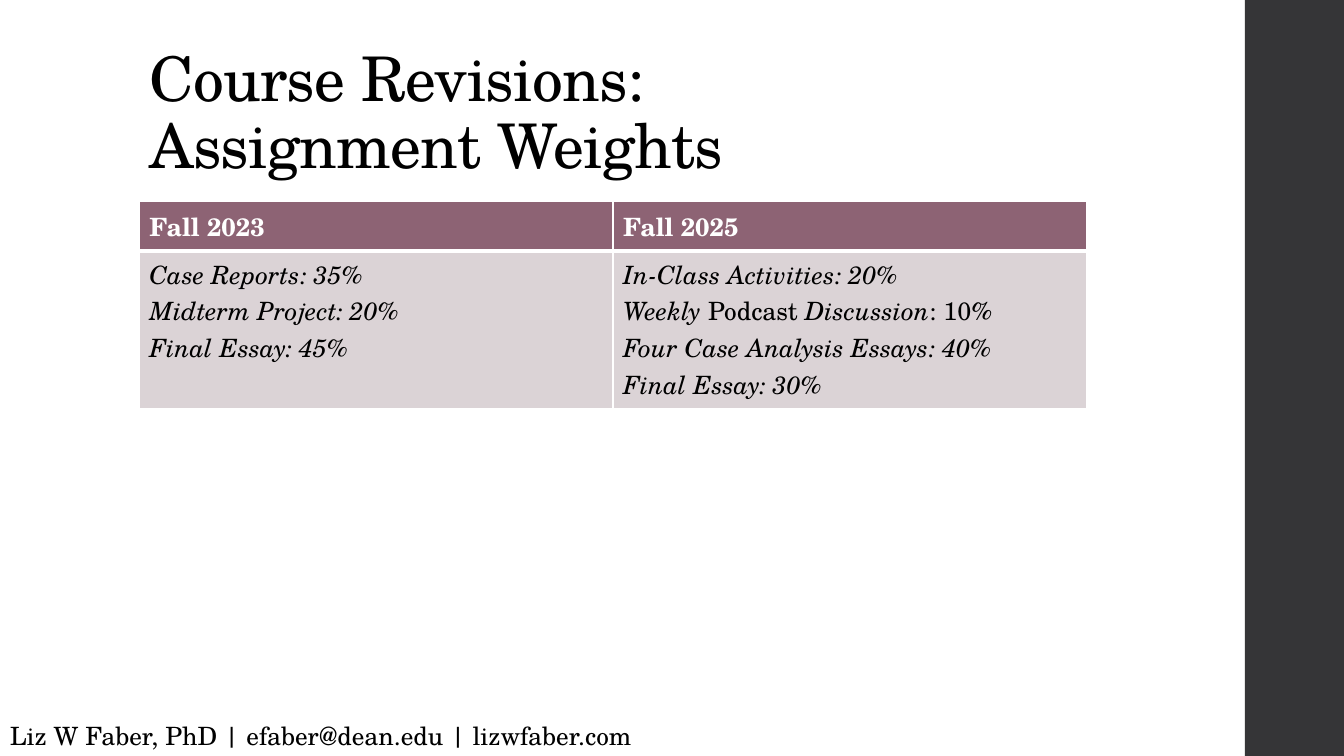
from lxml.etree import SubElement
from pptx import Presentation
from pptx.dml.color import RGBColor
from pptx.enum.shapes import MSO_SHAPE
from pptx.enum.text import MSO_ANCHOR, MSO_AUTO_SIZE, PP_ALIGN
from pptx.oxml.ns import qn
from pptx.util import Pt

FONT = "TeX Gyre Schola"
BLACK = RGBColor(0x00, 0x00, 0x00)
WHITE = RGBColor(0xFF, 0xFF, 0xFF)
CHARCOAL = RGBColor(0x35, 0x35, 0x37)
PLUM = RGBColor(0x8D, 0x63, 0x74)
PALE_PLUM = RGBColor(0xDB, 0xD3, 0xD6)

TITLE = "Course Revisions: \vAssignment Weights"
FOOTER = "Liz W Faber, PhD | efaber@dean.edu | lizwfaber.com"
COURSES = [
    ("Fall 2023", [
        [("Case Reports: 35%", True)],
        [("Midterm Project: 20%", True)],
        [("Final Essay: 45%", True)],
    ]),
    ("Fall 2025", [
        [("In-Class Activities: 20%", True)],
        [("Weekly ", True), ("Podcast ", False), ("Discussion", True), (": 10%", False)],
        [("Four Case Analysis Essays: 40%", True)],
        [("Final Essay: 30%", True)],
    ]),
]

SLIDE_W, SLIDE_H = 960, 540
BAND_LEFT = 889.2
LEFT = 99.4
COL_W = 338.4
ROW_HEIGHTS = (33.6, 112.8)


def set_font(font, size, color):
    font.name = FONT
    font.size = Pt(size)
    font.color.rgb = color


def style_cell(cell, fill, top, bottom):
    tc_pr = cell._tc.get_or_add_tcPr()
    for side, width in (("L", 1), ("R", 1), ("T", top), ("B", bottom)):
        ln = SubElement(tc_pr, qn(f"a:ln{side}"), w=str(Pt(width)))
        solid = SubElement(ln, qn("a:solidFill"))
        SubElement(solid, qn("a:srgbClr"), val=str(WHITE))
    cell.fill.solid()
    cell.fill.fore_color.rgb = fill


def fill_cell(cell, lines, color, bold):
    tf = cell.text_frame
    for i, runs in enumerate(lines):
        p = tf.add_paragraph() if i else tf.paragraphs[0]
        set_font(p.font, 18, color)
        p.font.bold = bold
        for text, italic in runs:
            r = p.add_run()
            r.text = text
            r.font.italic = italic


prs = Presentation()
prs.slide_width, prs.slide_height = Pt(SLIDE_W), Pt(SLIDE_H)
s = prs.slides.add_slide(prs.slide_layouts[5])

band = s.shapes.add_shape(MSO_SHAPE.RECTANGLE, Pt(BAND_LEFT), 0,
                          Pt(SLIDE_W - BAND_LEFT), Pt(SLIDE_H))
band.shadow.inherit = False
band.fill.solid()
band.fill.fore_color.rgb = CHARCOAL
band.line.fill.background()

title = s.shapes.title
title.left, title.top, title.width, title.height = Pt(LEFT), Pt(28.8), Pt(763.2), Pt(104.4)
tf = title.text_frame
tf.text = TITLE
tf.word_wrap = True
tf.auto_size = MSO_AUTO_SIZE.NONE
tf.vertical_anchor = MSO_ANCHOR.BOTTOM
p = tf.paragraphs[0]
p.alignment = PP_ALIGN.LEFT
p.line_spacing = 0.9
set_font(p.font, 44, BLACK)
for r in p.runs:
    r.font._element.set("spc", "-50")

table = s.shapes.add_table(2, len(COURSES), Pt(LEFT), Pt(144),
                           Pt(COL_W * len(COURSES)), Pt(sum(ROW_HEIGHTS))).table
for row, height in zip(table.rows, ROW_HEIGHTS):
    row.height = Pt(height)
for col, (term, weights) in enumerate(COURSES):
    table.columns[col].width = Pt(COL_W)
    head, body = table.cell(0, col), table.cell(1, col)
    style_cell(head, PLUM, 1, 3)
    fill_cell(head, [[(term, False)]], WHITE, True)
    style_cell(body, PALE_PLUM, 3, 1)
    fill_cell(body, weights, BLACK, False)

footer = s.shapes.add_textbox(0, Pt(511.2), Pt(499.7), Pt(28.8))
tf = footer.text_frame
tf.word_wrap = True
tf.text = FOOTER
set_font(tf.paragraphs[0].font, 18, BLACK)

prs.save("out.pptx")
